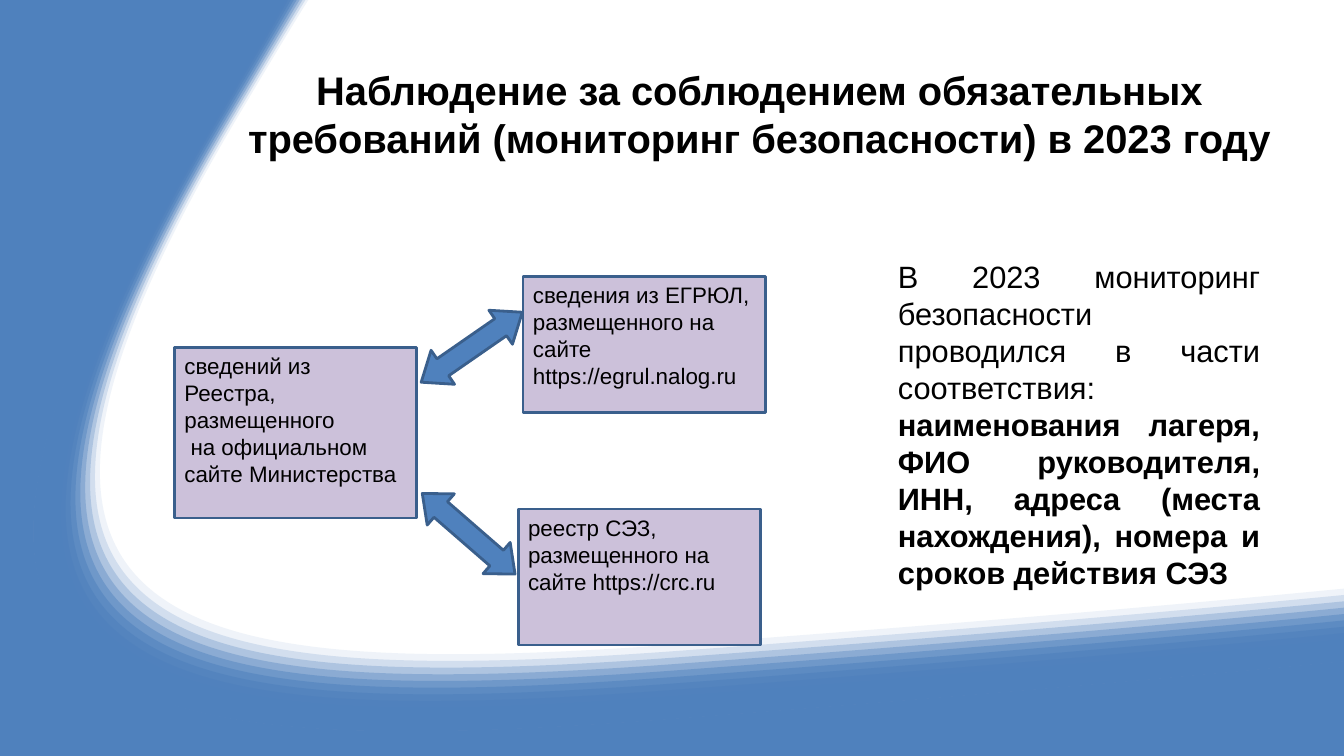
from pptx import Presentation
from pptx.dml.color import RGBColor
from pptx.enum import shapes, text
from pptx.oxml import ns
from pptx.util import Pt
from lxml import etree

WIDTH, HEIGHT = 960, 540
BLUE, OUTLINE, LILAC, BLACK = "4F81BD", "3A5F8C", "CCC1DA", "000000"
BANDS = 11

INNER_EDGE = [(960, 420.5), (958.3, 420.5), (781.2, 438.5), (496.8, 459.4),
              (115.9, 488.2), (-52.6, 455), (172.8, 78.5),
              (202.3, 28.8), (219.6, 0.7), (220.3, 0)]
OUTER_EDGE = [(960, 465.8), (935.3, 468.7), (754.6, 486), (478.1, 506.9),
              (87.8, 536.4), (-102.2, 506.2), (151.9, 82.1),
              (178.6, 37.4), (195.1, 7.9), (199.4, 0)]
SOLID_EDGE = [(960, 472.3), (960, 472.3), (774, 491), (471.6, 514.1),
              (76.3, 543.6), (-116.6, 512.6), (141.1, 82.8),
              (172.8, 29.5), (190.8, 0), (190.8, 0)]
CORNERS = [(0, 0), (0, HEIGHT), (WIDTH, HEIGHT), (WIDTH, 0)]


def colour(value):
    return RGBColor.from_string(value)


def blend(first, second, share):
    return first + (second - first) * share


def add_step(outline, tag, points):
    step = etree.SubElement(outline, ns.qn(tag))
    for x, y in points:
        point = etree.SubElement(step, ns.qn("a:pt"))
        point.set("x", str(Pt(x)))
        point.set("y", str(Pt(y)))


def add_curves(outline, edge):
    for start in range(1, len(edge), 3):
        add_step(outline, "a:cubicBezTo", edge[start:start + 3])


def draw_area(page, edge, opacity, back_edge=None):
    builder = page.shapes.build_freeform(0, 0, scale=1.0)
    builder.add_line_segments([(Pt(x), Pt(y)) for x, y in CORNERS[1:]], close=True)
    area = builder.convert_to_shape()
    area.shadow.inherit = False
    area.fill.solid()
    area.fill.fore_color.rgb = colour(BLUE)
    area.line.fill.background()
    outline = area.element.find(".//" + ns.qn("a:path"))
    for step in list(outline):
        outline.remove(step)
    add_step(outline, "a:moveTo", edge[:1])
    add_curves(outline, edge)
    if back_edge:
        add_step(outline, "a:lnTo", back_edge[:1])
        add_curves(outline, back_edge)
    else:
        for corner in CORNERS[:3]:
            add_step(outline, "a:lnTo", [corner])
    etree.SubElement(outline, ns.qn("a:close"))
    if opacity < 1:
        fill = area.element.spPr.find(ns.qn("a:solidFill"))
        alpha = etree.SubElement(fill[0], ns.qn("a:alpha"))
        alpha.set("val", str(round(opacity * 100000)))


def draw_wave(page):
    draw_area(page, SOLID_EDGE, 1)
    for band in range(BANDS):
        share = band / (BANDS - 1)
        edge = [tuple(blend(a, b, share) for a, b in zip(inner, outer))
                for inner, outer in zip(INNER_EDGE, OUTER_EDGE)]
        draw_area(page, edge, (band + 1) / BANDS, SOLID_EDGE[::-1])


def format_span(span, size, bold=False):
    span.font.name = "Arial"
    span.font.size = Pt(size)
    span.font.bold = bold
    span.font.color.rgb = colour(BLACK)


def place_title(page, left, top, width, height):
    title = page.shapes.title
    page.shapes.element.append(title.element)
    title.left, title.top, title.width, title.height = map(Pt, (left, top, width, height))
    frame = title.text_frame
    frame.text = ("Наблюдение за соблюдением обязательных требований "
                  "(мониторинг безопасности) в 2023 году")
    frame.vertical_anchor = text.MSO_ANCHOR.MIDDLE
    frame.paragraphs[0].alignment = text.PP_ALIGN.CENTER
    format_span(frame.paragraphs[0].runs[0], 28.5, True)


def add_panel(page, kind, box, fill):
    panel = page.shapes.add_shape(kind, *map(Pt, box))
    panel.shadow.inherit = False
    panel.fill.solid()
    panel.fill.fore_color.rgb = colour(fill)
    panel.line.color.rgb = colour(OUTLINE)
    panel.line.width = Pt(2)
    return panel


def add_source(page, box, wording):
    frame = add_panel(page, shapes.MSO_SHAPE.RECTANGLE, box, LILAC).text_frame
    frame.text = wording
    frame.vertical_anchor = text.MSO_ANCHOR.TOP
    para = frame.paragraphs[0]
    para.alignment = text.PP_ALIGN.LEFT
    for span in para.runs:
        format_span(span, 16)


def add_arrow(page, box, rotation, head):
    arrow = add_panel(page, shapes.MSO_SHAPE.LEFT_RIGHT_ARROW, box, BLUE)
    arrow.rotation = rotation
    arrow.adjustments[0] = 0.5
    arrow.adjustments[1] = head


def draw_sources(page, left, top):
    width, height = 173, 97.2
    add_source(page, (left, top + 51, width, 121.7),
               "сведений из Реестра, размещенного\v на официальном сайте Министерства")
    add_source(page, (left + 245.5, top + 166.3, width, height),
               "реестр СЭЗ, размещенного на сайте https://crc.ru")
    add_source(page, (left + 249, top, width, height),
               "сведения из ЕГРЮЛ, размещенного на сайте https://egrul.nalog.ru")
    add_arrow(page, (left + 168.5, top + 36, 87.8, 29.5), 325.3, 0.635)
    add_arrow(page, (left + 166.3, top + 169.2, 87.8, 29.5), 221, 0.591)


def draw_summary(page, left, top, width, height):
    box = page.shapes.add_textbox(*map(Pt, (left, top, width, height)))
    frame = box.text_frame
    frame.word_wrap = True
    para = frame.paragraphs[0]
    para.alignment = text.PP_ALIGN.JUSTIFY
    for wording, bold in (
            ("В 2023 мониторинг безопасности проводился в части соответствия: ", False),
            ("наименования лагеря, ФИО руководителя, ИНН, адреса (места нахождения), "
             "номера и сроков действия СЭЗ", True)):
        span = para.add_run()
        span.text = wording
        format_span(span, 22, bold)


def main():
    deck = Presentation()
    deck.slide_width, deck.slide_height = Pt(WIDTH), Pt(HEIGHT)
    page = deck.slides.add_slide(deck.slide_layouts[5])
    draw_wave(page)
    place_title(page, 149, 36, 787, 90)
    draw_sources(page, 124.6, 197.3)
    draw_summary(page, 634.3, 180.7, 272.9, 244.8)
    deck.save("out.pptx")


if __name__ == "__main__":
    main()
